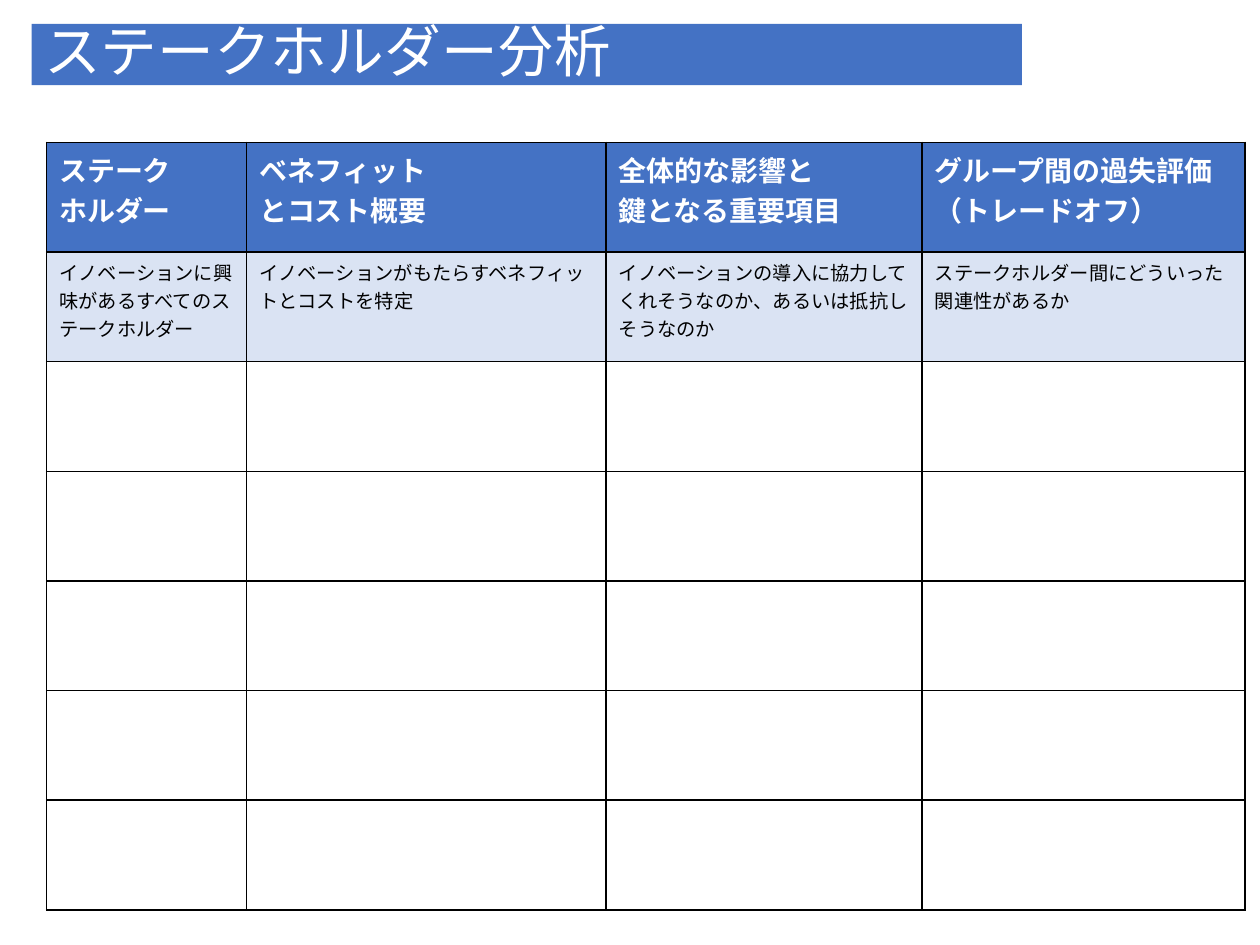
from lxml import etree
from pptx import Presentation
from pptx import util as u
from pptx.dml.color import RGBColor
from pptx.enum import shapes, text
from pptx.oxml import ns

COLORS = {"blue": "4472C4", "pale": "DAE3F3", "white": "FFFFFF", "black": "000000"}
TITLE = "ステークホルダー分析"
HEADERS = [
    ["ステーク", "ホルダー"],
    ["ベネフィット", "とコスト概要"],
    ["全体的な影響と", "鍵となる重要項目"],
    ["グループ間の過失評価（トレードオフ）"],
]
GUIDES = [
    ["イノベーションに興味があるすべてのステークホルダー"],
    ["イノベーションがもたらすベネフィットとコストを特定"],
    ["イノベーションの導入に協力してくれそうなのか、あるいは抵抗しそうなのか"],
    ["ステークホルダー間にどういった関連性があるか"],
]
EMPTY_ROWS = 5
COLUMN_WIDTHS = [4.03, 7.25, 6.37, 6.51]
ROW_HEIGHT = 2.21
TITLE_FORMAT = {"name": "Noto Sans CJK JP", "size": u.Pt(32.4), "bold": False}
HEADER_FORMAT = {"name": "Calibri", "size": u.Pt(16), "bold": True}
GUIDE_FORMAT = {"name": "Calibri", "size": u.Pt(11), "bold": False}
ROWS = [(HEADERS, "blue", "white", HEADER_FORMAT), (GUIDES, "pale", "black", GUIDE_FORMAT)]


def rgb(name):
    return RGBColor.from_string(COLORS[name])


def write(frame, lines, color, values):
    for index, line in enumerate(lines):
        para = frame.paragraphs[0] if index == 0 else frame.add_paragraph()
        para.alignment = text.PP_ALIGN.LEFT
        span = para.add_run()
        span.text = line
        for key, value in values.items():
            setattr(span.font, key, value)
        span.font.color.rgb = rgb(color)


def outline(cell):
    properties = cell._tc.get_or_add_tcPr()
    for index, side in enumerate(("lnL", "lnR", "lnT", "lnB")):
        line = etree.Element(ns.qn(f"a:{side}"), w=str(u.Pt(1)))
        fill = etree.SubElement(line, ns.qn("a:solidFill"))
        etree.SubElement(fill, ns.qn("a:srgbClr"), val=COLORS["black"])
        properties.insert(index, line)


def add_title(page):
    box = page.shapes.add_shape(
        shapes.MSO_SHAPE.RECTANGLE, u.Cm(0.64), u.Cm(0.48), u.Cm(19.96), u.Cm(1.24))
    box.shadow.inherit = False
    box.fill.solid()
    box.fill.fore_color.rgb = rgb("blue")
    box.line.fill.background()
    frame = box.text_frame
    frame.word_wrap = True
    frame.vertical_anchor = text.MSO_ANCHOR.MIDDLE
    write(frame, [TITLE], "white", TITLE_FORMAT)
    frame.paragraphs[0].line_spacing = 0.9


def add_grid(page):
    count = len(ROWS) + EMPTY_ROWS
    grid = page.shapes.add_table(
        count, len(COLUMN_WIDTHS), u.Cm(0.94), u.Cm(2.87),
        u.Cm(sum(COLUMN_WIDTHS)), u.Cm(ROW_HEIGHT * count)).table
    grid.horz_banding = False
    for column, width in zip(grid.columns, COLUMN_WIDTHS):
        column.width = u.Cm(width)
    for row in grid.rows:
        row.height = u.Cm(ROW_HEIGHT)
    for cell in grid.iter_cells():
        cell.fill.background()
        outline(cell)
    for row, (entries, fill, color, values) in zip(grid.rows, ROWS):
        for cell, lines in zip(row.cells, entries):
            cell.fill.solid()
            cell.fill.fore_color.rgb = rgb(fill)
            write(cell.text_frame, lines, color, values)


def main():
    deck = Presentation()
    deck.slide_width, deck.slide_height = u.Cm(25.4), u.Cm(19.05)
    page = deck.slides.add_slide(deck.slide_layouts[6])
    add_title(page)
    add_grid(page)
    deck.save("out.pptx")


if __name__ == "__main__":
    main()
